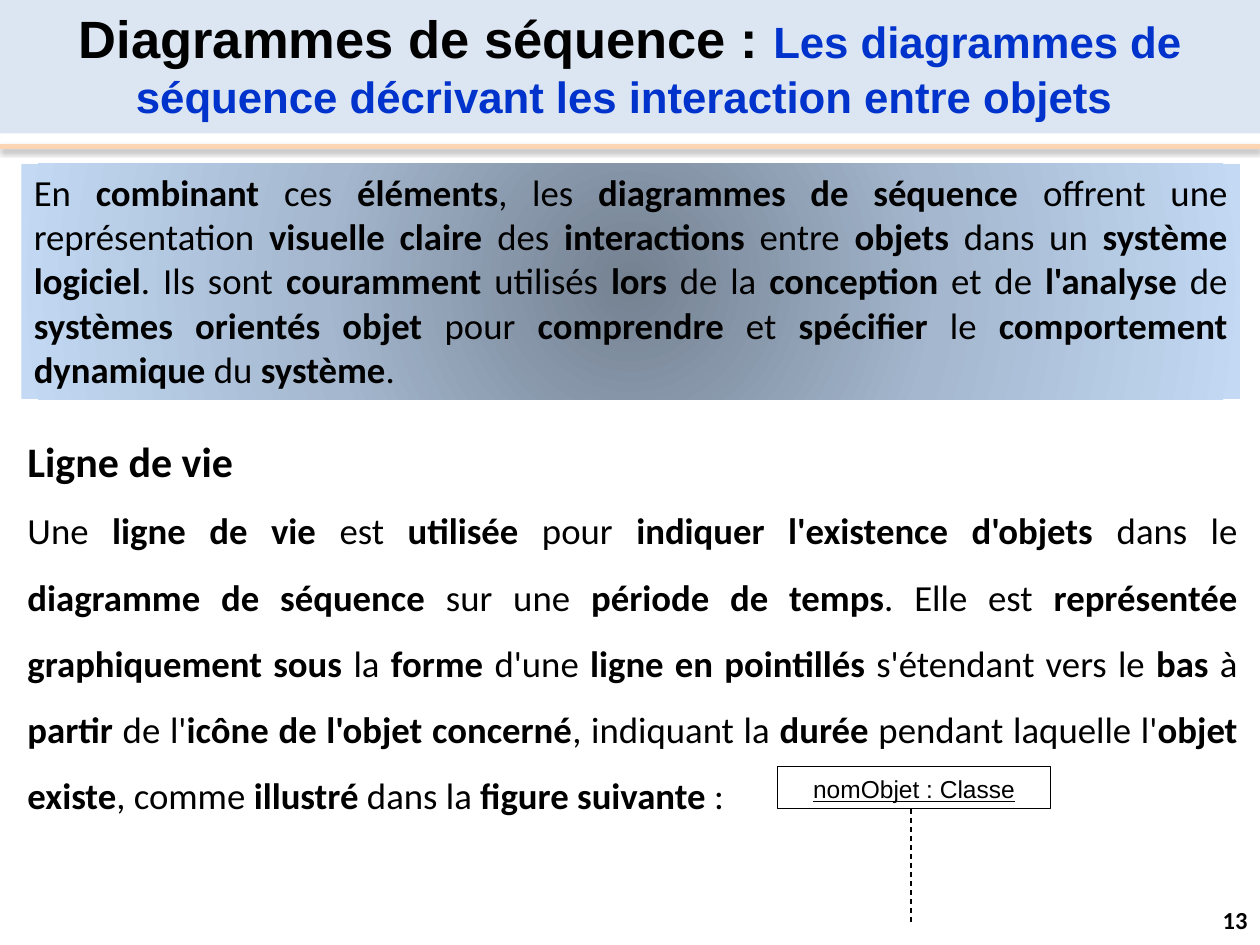
from lxml import etree
from pptx import Presentation
from pptx.dml.color import RGBColor
from pptx.enum.dml import MSO_LINE
from pptx.enum.shapes import MSO_CONNECTOR as Wire, MSO_SHAPE as Form
from pptx.enum.text import MSO_ANCHOR as Anchor, PP_ALIGN as Align
from pptx.oxml import parse_xml
from pptx.oxml.ns import nsdecls, qn
from pptx.util import Inches, Pt


def rgb(code):
    return RGBColor.from_string(code)


def write(par, text, size, face="Calibri", color="000000"):
    """Add runs to a paragraph; text between asterisks is bold."""
    for i, part in enumerate(text.split("*")):
        if part:
            run = par.add_run()
            run.text = part
            run.font.size = Pt(size)
            run.font.name = face
            run.font.bold = i % 2 == 1
            run.font.color.rgb = rgb(color)


deck = Presentation()
deck.slide_width, deck.slide_height = Inches(10), Inches(7.5)
slide = deck.slides.add_slide(deck.slide_layouts[6])
shapes = slide.shapes

# Frames: place, fill, anchor
frames = {
    "number": ((7.67, 7.1, 2.33, 0.4), None, Anchor.MIDDLE),
    "title": ((0, -0.04, 10, 1.1), "DCE6F2", Anchor.MIDDLE),
    "intro": ((0.17, 1.3, 9.67, 1.87), "C3D9F4", Anchor.TOP),
    "body": ((0.12, 3.21, 9.8, 3.3), None, Anchor.TOP),
    "object": ((6.17, 6.08, 2.17, 0.34), "FFFFFF", Anchor.TOP),
}
box = {}
for name, (at, fill, anchor) in frames.items():
    place = [Inches(v) for v in at]
    if fill:
        shape = shapes.add_shape(Form.RECTANGLE, *place)
        shape.shadow.inherit = False
        shape.fill.solid()
        shape.fill.fore_color.rgb = rgb(fill)
        shape.line.fill.background()
    else:
        shape = shapes.add_textbox(*place)
    shape.text_frame.word_wrap = True
    shape.text_frame.vertical_anchor = anchor
    box[name] = shape

# Slide number
par = box["number"].text_frame.paragraphs[0]
par.alignment = Align.RIGHT
write(par, "*13*", 14)

# Title
par = box["title"].text_frame.paragraphs[0]
par.alignment = Align.CENTER
write(par, "*Diagrammes de séquence : *", 30, "Arial")
write(par, "*Les diagrammes de séquence décrivant les interaction entre objets *",
      25, "Arial", "0033CC")

# Intro with a round gradient
stops = "".join(
    f'<a:gs pos="{pos * 1000}"><a:srgbClr val="{code}"/></a:gs>'
    for pos, code in ((0, "748191"), (50, "A4B7CE"), (100, "C3D9F4")))
grad = parse_xml(
    f'<a:gradFill {nsdecls("a")} rotWithShape="1"><a:gsLst>{stops}</a:gsLst>'
    '<a:path path="circle"><a:fillToRect l="50000" t="50000" r="50000" b="50000"/>'
    '</a:path></a:gradFill>')
props = box["intro"].element.spPr
props.replace(props.find(qn("a:solidFill")), grad)
par = box["intro"].text_frame.paragraphs[0]
par.alignment = Align.JUSTIFY
write(par, "En *combinant* ces *éléments*, les *diagrammes de séquence* offrent une "
      "représentation *visuelle claire* des *interactions* entre *objets* dans un "
      "*système logiciel*. Ils sont *couramment* utilisés *lors* de la *conception* "
      "et de *l'analyse* de *systèmes orientés objet *pour *comprendre* et "
      "*spécifier* le *comportement dynamique* du *système*.", 21)

# Lifeline text
frame = box["body"].text_frame
head, par = frame.paragraphs[0], frame.add_paragraph()
for item in (head, par):
    item.alignment = Align.JUSTIFY
    item.line_spacing = 1.5
write(head, "*Ligne de vie *", 24)
write(par, "Une *ligne de vie *est *utilisée* pour *indiquer l'existence d'objets *"
      "dans le *diagramme de séquence *sur une *période de temps*. Elle est "
      "*représentée graphiquement sous* la *forme *d'une *ligne en pointillés *"
      "s'étendant vers le *bas* à *partir* de l'*icône de l'objet concerné*, "
      "indiquant la *durée* pendant laquelle l'*objet existe*, comme *illustré* "
      "dans la *figure suivante *:", 21)

# Object box
box["object"].line.color.rgb = rgb("000000")
box["object"].line.width = Pt(0.5)
par = box["object"].text_frame.paragraphs[0]
par.alignment = Align.CENTER
par.line_spacing = 1.06
par.space_after = Pt(8)
write(par, "nomObjet : Classe", 14, "Arial")
par.runs[0].font.underline = True

# Title rule and dashed lifeline
lines = []
for ends, color, width in (((0, 1.16, 10, 1.16), "FCD5B5", 3),
                           ((7.23, 6.42, 7.23, 7.35), "000000", 0.75)):
    line = shapes.add_connector(Wire.STRAIGHT, *[Inches(v) for v in ends])
    line.line.color.rgb = rgb(color)
    line.line.width = Pt(width)
    lines.append(line)
rule, life = lines
life.line.dash_style = MSO_LINE.DASH
etree.SubElement(life.element.spPr, qn("a:effectLst"))
rule.element.spPr.append(parse_xml(
    f'<a:effectLst {nsdecls("a")}><a:outerShdw blurRad="{Pt(3.1)}" dist="{Pt(1.8)}" '
    'dir="5400000" rotWithShape="0"><a:srgbClr val="000000"><a:alpha val="35000"/>'
    '</a:srgbClr></a:outerShdw></a:effectLst>'))

deck.save("out.pptx")
